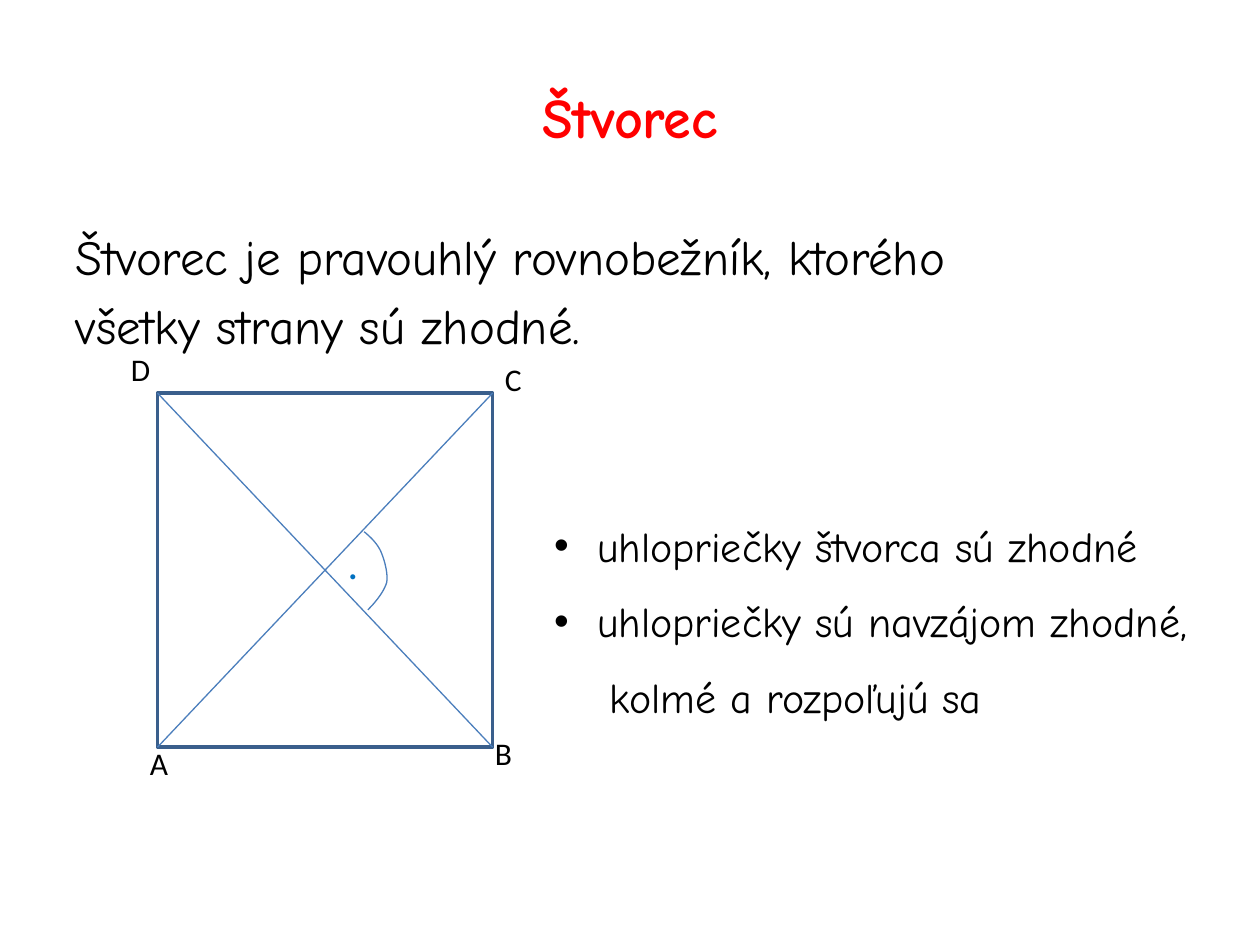
from lxml.etree import SubElement
from pptx import Presentation
from pptx.dml.color import RGBColor as Color
from pptx.enum.shapes import MSO_CONNECTOR as Connector, MSO_SHAPE as Shape
from pptx.enum.text import MSO_ANCHOR as Anchor, MSO_AUTO_SIZE as AutoSize, PP_ALIGN as Align
from pptx.oxml.ns import qn
from pptx.util import Inches, Pt

TITLE = "Štvorec"
DEFINITION = ["Štvorec je pravouhlý rovnobežník, ktorého", "všetky strany sú zhodné."]
PROPERTIES = [
    ("uhlopriečky štvorca sú zhodné", "•"),
    ("uhlopriečky sú navzájom zhodné,", "•"),
    ("kolmé a rozpoľujú sa", None),
]
VERTICES = [
    ("A", 1.09, 5.86, 0.35),
    ("B", 3.83, 5.78, 0.34),
    ("C", 3.91, 2.81, 0.34),
    ("D", 0.94, 2.73, 0.36),
]
LEFT, TOP, WIDTH, HEIGHT = 1.25, 3.12, 2.66, 2.81
RIGHT, BOTTOM = LEFT + WIDTH, TOP + HEIGHT
DIAGONALS = [((LEFT, BOTTOM), (RIGHT, TOP)), ((LEFT, TOP), (RIGHT, BOTTOM))]
ANGLE_ARC = [
    ((2.89, 4.22), (2.94, 4.26), (2.99, 4.31), (3.02, 4.37)),
    ((3.02, 4.37), (3.05, 4.44), (3.08, 4.54), (3.07, 4.62)),
    ((3.07, 4.62), (3.05, 4.69), (2.99, 4.77), (2.92, 4.84)),
]
ARC_STEPS = 10

THEME = {
    "hand": "Comic Neue", "plain": "Calibri",
    "title": 32, "body": 28, "list": 24, "label": 18,
    "red": "FF0000", "black": "000000", "dot": "0070C0",
    "side": "3A5F8C", "diagonal": "4B7EBC",
    "thick": 2, "thin": 0.75,
}


def write(para, text, size, font="hand", color="black", bold=False, align=Align.LEFT,
          margin=0, indent=0, bullet=None, spacing=None):
    para.alignment = align
    para.line_spacing = spacing
    props = para._p.get_or_add_pPr()
    props.set("marL", str(Inches(margin)))
    props.set("indent", str(Inches(indent)))
    if bullet:
        SubElement(props, qn("a:buFont")).set("typeface", "Arial")
        SubElement(props, qn("a:buChar")).set("char", bullet)
    else:
        SubElement(props, qn("a:buNone"))
    span = para.add_run()
    span.text = text
    span.font.name = THEME[font]
    span.font.size = Pt(THEME[size])
    span.font.bold = bold
    span.font.color.rgb = Color.from_string(THEME[color])


def paragraphs(frame, count):
    return [frame.paragraphs[0]] + [frame.add_paragraph() for _ in range(count - 1)]


def place(shape, left, top, width, height):
    shape.left, shape.top, shape.width, shape.height = map(Inches, (left, top, width, height))


def add_text_box(slide, left, top, width, height, wrap=False):
    box = slide.shapes.add_textbox(*map(Inches, (left, top, width, height)))
    box.text_frame.word_wrap = wrap
    box.text_frame.auto_size = AutoSize.SHAPE_TO_FIT_TEXT
    return box.text_frame


def outline(shape, color, width):
    shape.line.color.rgb = Color.from_string(THEME[color])
    shape.line.width = Pt(THEME[width])


def curve_point(curve, t):
    weights = ((1 - t) ** 3, 3 * t * (1 - t) ** 2, 3 * t ** 2 * (1 - t), t ** 3)
    return tuple(Inches(sum(w * p[axis] for w, p in zip(weights, curve))) for axis in (0, 1))


def add_heading_and_body(slide):
    title, body = slide.placeholders
    place(title, 0.5, 0.3, 9, 1.25)
    title.text_frame.vertical_anchor = Anchor.MIDDLE
    write(title.text_frame.paragraphs[0], TITLE, "title", color="red", bold=True,
          align=Align.CENTER)
    place(body, 0.5, 1.75, 9, 4.95)
    for para, text in zip(paragraphs(body.text_frame, len(DEFINITION)), DEFINITION):
        write(para, text, "body", margin=0.38, indent=-0.38)


def add_square(slide):
    square = slide.shapes.add_shape(Shape.RECTANGLE, *map(Inches, (LEFT, TOP, WIDTH, HEIGHT)))
    square.shadow.inherit = False
    square.fill.background()
    outline(square, "side", "thick")
    for start, end in DIAGONALS:
        line = slide.shapes.add_connector(Connector.STRAIGHT, *map(Inches, start + end))
        outline(line, "diagonal", "thin")
        SubElement(line._element.spPr, qn("a:effectLst"))
    for name, left, top, width in VERTICES:
        frame = add_text_box(slide, left, top, width, 0.4)
        write(frame.paragraphs[0], name, "label", font="plain")


def add_right_angle(slide):
    points = [curve_point(curve, step / ARC_STEPS)
              for curve in ANGLE_ARC for step in range(1, ARC_STEPS + 1)]
    builder = slide.shapes.build_freeform(*curve_point(ANGLE_ARC[0], 0))
    builder.add_line_segments(points, close=False)
    arc = builder.convert_to_shape()
    arc.shadow.inherit = False
    arc.fill.background()
    outline(arc, "diagonal", "thin")
    frame = add_text_box(slide, 2.66, 4.22, 0.29, 0.5)
    write(frame.paragraphs[0], ".", "list", font="plain", color="dot")


def add_properties(slide):
    frame = add_text_box(slide, 4.3, 3.88, 5.62, 1.92, wrap=True)
    for para, (text, bullet) in zip(paragraphs(frame, len(PROPERTIES)), PROPERTIES):
        margin, indent = (0.34, -0.34) if bullet else (0.44, 0)
        write(para, text, "list", margin=margin, indent=indent, bullet=bullet, spacing=1.5)


def main():
    deck = Presentation()
    deck.slide_width, deck.slide_height = Inches(10), Inches(7.5)
    slide = deck.slides.add_slide(deck.slide_layouts[1])
    add_heading_and_body(slide)
    add_square(slide)
    add_properties(slide)
    add_right_angle(slide)
    deck.save("out.pptx")


if __name__ == "__main__":
    main()
